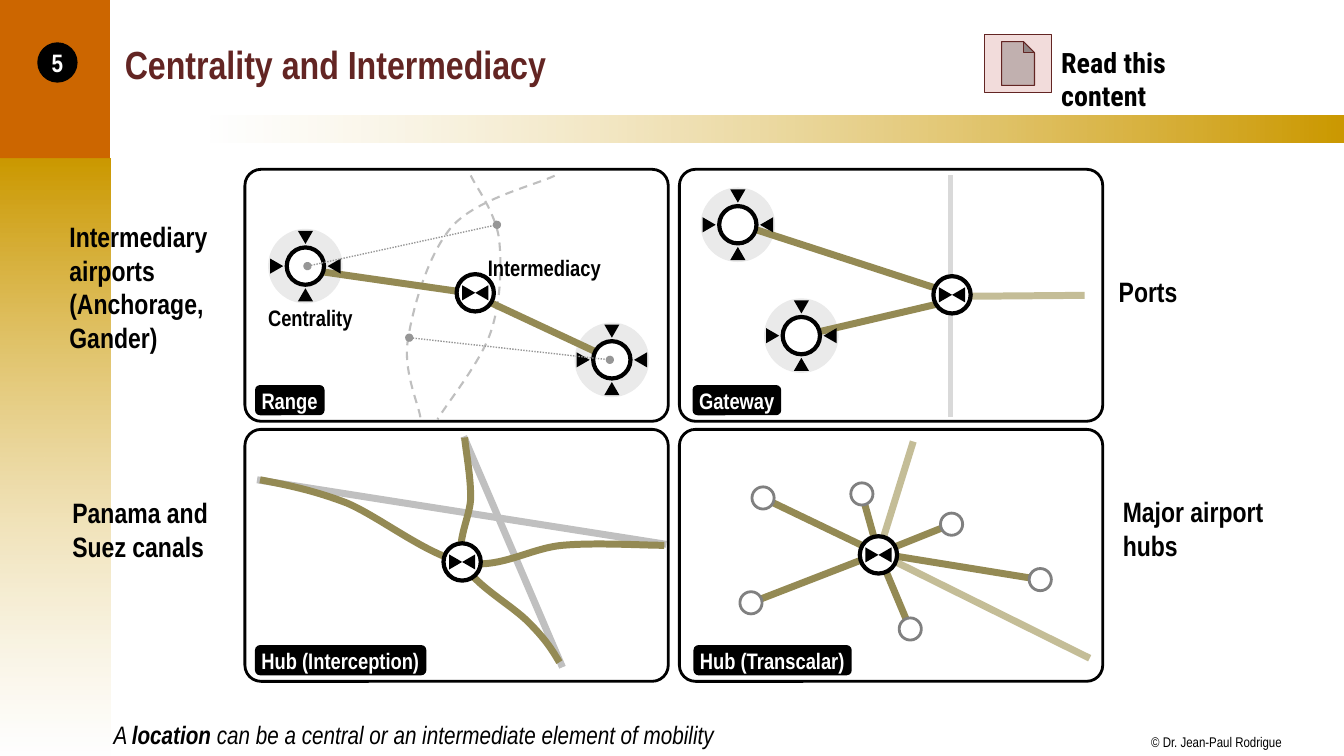
import dataclasses
import itertools

import lxml.etree
import pptx
import pptx.dml.color
import pptx.enum.dml
import pptx.enum.shapes
import pptx.enum.text
import pptx.oxml.ns
import pptx.util

SHAPE = pptx.enum.shapes.MSO_SHAPE
DASH = pptx.enum.dml.MSO_LINE
ALIGN = pptx.enum.text.PP_ALIGN
ANCHOR = pptx.enum.text.MSO_ANCHOR
CELL = pptx.util.Inches(0.1)
COLUMNS, ROWS = 133.33, 75


@dataclasses.dataclass(frozen=True)
class Theme:
    """Colours, fonts and type sizes of the slide."""
    ink: str = "000000"
    paper: str = "FFFFFF"
    gold: str = "CC9900"
    orange: str = "CC6600"
    wine: str = "632523"
    blush: str = "F2DCDB"
    olive: str = "948A54"
    sand: str = "C4BD97"
    halo: str = "EAEAEA"
    barrier: str = "D9D9D9"
    contour: str = "BFBFBF"
    shortcut: str = "C0C0C0"
    reach: str = "969696"
    terminal: str = "808080"
    font: str = "Arial Narrow"
    button_font: str = "Roboto Condensed"
    title: int = 28
    note: int = 20
    body: int = 18
    label: int = 16
    small: int = 10


THEME = Theme()


def rgb(colour):
    """Turn a hexadecimal string into a colour."""
    return pptx.dml.color.RGBColor.from_string(colour)


def add_element(parent, tag, **attributes):
    """Append a drawing element to a parent."""
    return lxml.etree.SubElement(parent, pptx.oxml.ns.qn(tag), attributes)


@dataclasses.dataclass
class Region:
    """A box on the slide grid that places parts relative to its corner."""
    page: object
    left: float
    top: float
    width: float
    height: float

    def point(self, column, row):
        """Give the slide position of a grid point."""
        return round((self.left + column) * CELL), round((self.top + row) * CELL)

    def frame(self, box):
        """Give the slide position and size of a box."""
        column, row, width, height = box
        return *self.point(column, row), round(width * CELL), round(height * CELL)

    def shape(self, kind, box, fill=None, line=None, weight=0):
        """Add a preset shape with a plain fill and outline."""
        shape = self.page.shapes.add_shape(kind, *self.frame(box))
        shape.shadow.inherit = False
        paint(shape.fill, fill)
        outline(shape.line, line, weight)
        return shape

    def disc(self, centre, size, fill, line=None, weight=0):
        """Add a circle around a centre."""
        column, row = centre
        box = (column - size / 2, row - size / 2, size, size)
        return self.shape(SHAPE.OVAL, box, fill, line, weight)

    def arrow(self, column, row, turn):
        """Add a small triangle around a centre."""
        box = (column - 0.75, row - 0.65, 1.5, 1.3)
        self.shape(SHAPE.ISOSCELES_TRIANGLE, box, THEME.ink).rotation = turn

    def link(self, start, end, colour, weight=5, dash=None, dotted_ends=False):
        """Add a straight line between two points."""
        link = self.page.shapes.add_connector(
            pptx.enum.shapes.MSO_CONNECTOR.STRAIGHT, *self.point(*start), *self.point(*end))
        outline(link.line, colour, weight, dash)
        if dotted_ends:
            for tag in ("a:headEnd", "a:tailEnd"):
                add_element(link.line._get_or_add_ln(), tag, type="oval")
        add_element(link._element.spPr, "a:effectLst")

    def curve(self, points, colour, weight, dash=None):
        """Add an open curve from a start and triples of Bezier points."""
        start, *rest = [self.point(*point) for point in points]
        builder = self.page.shapes.build_freeform(*start)
        builder.add_line_segments(rest, close=False)
        curve = builder.convert_to_shape()
        steps = curve._element.xpath(".//a:lnTo")
        for triple in zip(steps[::3], steps[1::3], steps[2::3]):
            bezier = add_element(triple[0].getparent(), "a:cubicBezTo")
            for step in triple:
                bezier.append(step[0])
                step.getparent().remove(step)
        curve.shadow.inherit = False
        paint(curve.fill, None)
        outline(curve.line, colour, weight, dash)

    def text(self, box, spans, size, inset=(0.1, 0.05), **style):
        """Add a text box."""
        holder = self.page.shapes.add_textbox(*self.frame(box))
        write(holder, spans, size, inset=inset, **style)


def paint(fill, colour):
    """Set a solid fill, or none."""
    if colour is None:
        fill.background()
    else:
        fill.solid()
        fill.fore_color.rgb = rgb(colour)


def outline(line, colour, weight, dash=None):
    """Set the colour, width and dash of a line, or no line."""
    paint(line.fill, colour)
    if colour:
        line.width = pptx.util.Pt(weight)
    if dash:
        line.dash_style = dash


def fade(shape, colours, angle, clear_stop, opacity):
    """Fill a shape with a two-colour gradient that has one translucent stop."""
    shape.fill.gradient()
    shape.fill.gradient_angle = angle
    for stop, colour in zip(shape.fill.gradient_stops, colours):
        stop.color.rgb = rgb(colour)
    stop = shape._element.xpath(".//a:gs")[clear_stop]
    add_element(stop[0], "a:alpha", val=str(opacity * 1000))


def write(holder, spans, size, colour=THEME.ink, font=THEME.font, italic=False, wrap=False,
          align=ALIGN.LEFT, anchor=ANCHOR.TOP, inset=(0, 0), grow=True):
    """Write one paragraph of (wording, bold) spans into a shape."""
    frame = holder.text_frame
    frame.word_wrap = wrap
    kinds = pptx.enum.text.MSO_AUTO_SIZE
    frame.auto_size = kinds.SHAPE_TO_FIT_TEXT if grow else kinds.NONE
    frame.vertical_anchor = anchor
    frame.margin_left = frame.margin_right = pptx.util.Inches(inset[0])
    frame.margin_top = frame.margin_bottom = pptx.util.Inches(inset[1])
    para = frame.paragraphs[0]
    para.alignment = align
    for wording, bold in spans:
        span = para.add_run()
        span.text = wording
        span.font.name, span.font.size = font, pptx.util.Pt(size)
        span.font.bold, span.font.italic = bold, italic
        span.font.color.rgb = rgb(colour)


def add_hub(region, column, row):
    """Draw an intermediate node with two facing triangles."""
    region.disc((column, row), 3.7, THEME.paper, THEME.ink, 3)
    region.arrow(column - 0.65, row, 90)
    region.arrow(column + 0.65, row, 270)


def add_halos(region, centres):
    """Draw the pale discs behind central nodes."""
    for centre in centres:
        region.disc(centre, 7.4, THEME.halo)


def add_centres(region, centres):
    """Draw central nodes with four inward triangles."""
    reach = 2.85
    for column, row in centres:
        region.disc((column, row), 3.7, THEME.paper, THEME.ink, 3)
        for across, down, turn in ((0, 1, 0), (-1, 0, 90), (0, -1, 180), (1, 0, 270)):
            region.arrow(column + across * reach, row + down * reach, turn)


def add_frame(region, name, column, width):
    """Draw the panel outline and its name tag."""
    frame = region.shape(SHAPE.ROUNDED_RECTANGLE, (0, 0, region.width, region.height),
                         None, THEME.ink, 2)
    frame.adjustments[0] = 0.064
    tag = region.shape(SHAPE.ROUNDED_RECTANGLE, (column, 21.4, width, 3), THEME.ink)
    write(tag, [(name, True)], THEME.label, THEME.paper, anchor=ANCHOR.MIDDLE,
          inset=(0.05, 0), grow=False)


def add_range(region):
    """Draw two centres joined through an intermediate range."""
    centres = [(6, 9.6), (36.4, 18.9)]
    add_halos(region, centres)
    for points in (
        [(22.4, 0.6), (22.9, 1.7), (24.8, 4.2), (25.2, 6.8), (25.5, 9.4), (25.4, 13.1),
         (24.4, 16.1), (23.4, 19.1), (20.2, 23), (19.1, 24.8)],
        [(17.4, 24.6), (17.2, 23.2), (15.6, 19.9), (16.2, 16.7), (16.7, 13.6), (18.2, 8.3),
         (20.6, 5.6), (23.1, 2.9), (28.7, 1.6), (30.8, 0.6)],
    ):
        region.curve(points, THEME.contour, 1.5, DASH.DASH)
    region.link((34.8, 18.1), (23.9, 13), THEME.olive)
    region.link((21.1, 12.1), (7.2, 10.1), THEME.olive)
    add_hub(region, 22.85, 12.25)
    add_centres(region, centres)
    for start, end in (((6.2, 9.6), (25, 5.5)), ((16.3, 16.7), (36.2, 18.9))):
        region.link(start, end, THEME.reach, 1, DASH.ROUND_DOT, dotted_ends=True)
    region.text((2.3, 13.4, 8.5, 2.7), [("Centrality", True)], THEME.label, (0, 0))
    region.text((24.1, 8.4, 11.3, 2.7), [("Intermediacy", True)], THEME.label, (0, 0))
    add_frame(region, "Range", 1, 6.9)


def add_gateway(region):
    """Draw two centres that pass a barrier through a gateway."""
    centres = [(5.8, 5.5), (12.1, 16.5)]
    region.link((26.9, 0.6), (26.9, 24.6), THEME.barrier, 3)
    add_halos(region, centres)
    region.link((40.2, 12.5), (28, 12.6), THEME.sand)
    region.link((26.3, 13.2), (12.2, 16.5), THEME.olive)
    region.link((26.4, 12.1), (6.4, 5.6), THEME.olive)
    add_centres(region, centres)
    add_hub(region, 27.05, 12.45)
    add_frame(region, "Gateway", 1.3, 8.8)


def add_interception(region):
    """Draw direct routes that bend through a hub."""
    region.link((21.7, 0.7), (31.5, 23.6), THEME.shortcut)
    region.link((1.2, 5), (41.8, 11.4), THEME.shortcut)
    for points in (
        [(1.5, 5), (4.1, 5.5), (6.7, 6), (10.1, 7.3), (13.4, 8.7), (18.1, 12.5), (21.7, 13.2),
         (25.3, 13.9), (28.2, 11.8), (31.5, 11.5), (34.8, 11.2), (39.5, 11.5), (41.6, 11.5)],
        [(31.2, 23.1), (30.5, 21.9), (29.8, 20.8), (28.2, 19.2), (26.6, 17.5), (22.7, 15.4),
         (21.7, 13.3), (20.8, 11.2), (22.4, 8.7), (22.4, 6.7), (22.4, 4.6), (21.9, 2),
         (21.8, 0.8)],
    ):
        region.curve(points, THEME.olive, 5)
    add_hub(region, 21.55, 13.15)
    add_frame(region, "Hub (Interception)", 1, 17)


def add_transcalar(region):
    """Draw a hub with local spokes and two long-distance links."""
    hub = (19.75, 12.3)
    terminals = [(8.3, 6.8), (7.1, 17.2), (27, 9.4), (22.9, 19.8), (18.1, 6.4), (35.8, 14.9)]
    for end in ((23.2, 1.2), (40.7, 22.7)):
        region.link(hub, end, THEME.sand)
    for terminal in terminals:
        region.link(hub, terminal, THEME.olive)
    add_hub(region, 19.75, 12.45)
    for terminal in terminals:
        region.disc(terminal, 2.2, THEME.paper, THEME.terminal, 2)
    add_frame(region, "Hub (Transcalar)", 1.4, 15.7)


def add_backdrop(region):
    """Draw the side band, the top band and the copyright line."""
    side = region.shape(SHAPE.RECTANGLE, (0, 15.7, 10.95, 59.3))
    fade(side, (THEME.gold, THEME.paper), 270, 1, 51)
    bar = region.shape(SHAPE.RECTANGLE, (20.9, 11.5, region.width - 20.9, 2.6))
    fade(bar, (THEME.paper, THEME.gold), 0, 0, 50)
    region.text((114.2, 72.8, 13.1, 1.7), [("© Dr. Jean-Paul Rodrigue", False)],
                THEME.small, (0, 0))
    region.shape(SHAPE.RECTANGLE, (0, 0, 10.9, 15.7), THEME.orange)


def add_heading(region):
    """Place the title, the slide number and the reading button."""
    region.text((11.4, 1.1, 119.7, 10.4), [("Centrality and Intermediacy", True)], THEME.title,
                colour=THEME.wine, anchor=ANCHOR.MIDDLE, wrap=True, grow=False)
    region.shape(SHAPE.ACTION_BUTTON_DOCUMENT, (97.7, 3.4, 6.6, 5.8),
                 THEME.blush, THEME.wine, 0.75)
    region.text((104.3, 4, 18.6, 4.4), [("Read this content", True)], THEME.note,
                font=THEME.button_font, wrap=True)
    badge = region.disc((5.7, 6.2), 4, THEME.ink)
    write(badge, [("5", True)], THEME.body, THEME.paper, align=ALIGN.CENTER,
          anchor=ANCHOR.MIDDLE, grow=False)


def add_notes(region):
    """Place the examples beside the panels and the closing sentence."""
    for wording, box in (
        ("Ports", (110, 26.7, 18, 4.4)),
        ("Intermediary airports (Anchorage, Gander)", (5.9, 21.3, 18, 14.5)),
        ("Panama and Suez canals", (6.2, 48.7, 18, 7.7)),
        ("Major airport hubs", (110.4, 48.6, 18, 7.7)),
    ):
        region.text(box, [(wording, True)], THEME.note, wrap=True)
    spans = [("A ", False), ("location", True),
             (" can be a central or an intermediate element of mobility", False)]
    region.text((10.3, 70.9, 64.5, 4), spans, THEME.body, italic=True)


def main():
    """Build the slide and save it."""
    deck = pptx.Presentation()
    deck.slide_width, deck.slide_height = round(COLUMNS * CELL), ROWS * CELL
    page = deck.slides.add_slide(deck.slide_layouts[6])
    whole = Region(page, 0, 0, COLUMNS, ROWS)
    add_backdrop(whole)
    add_heading(whole)
    corners = itertools.product((16.8, 42.6), (24.3, 67.4))
    panels = (add_range, add_gateway, add_interception, add_transcalar)
    for add_panel, (top, left) in zip(panels, corners):
        add_panel(Region(page, left, top, 42, 25))
    add_notes(whole)
    deck.save("out.pptx")


if __name__ == "__main__":
    main()
